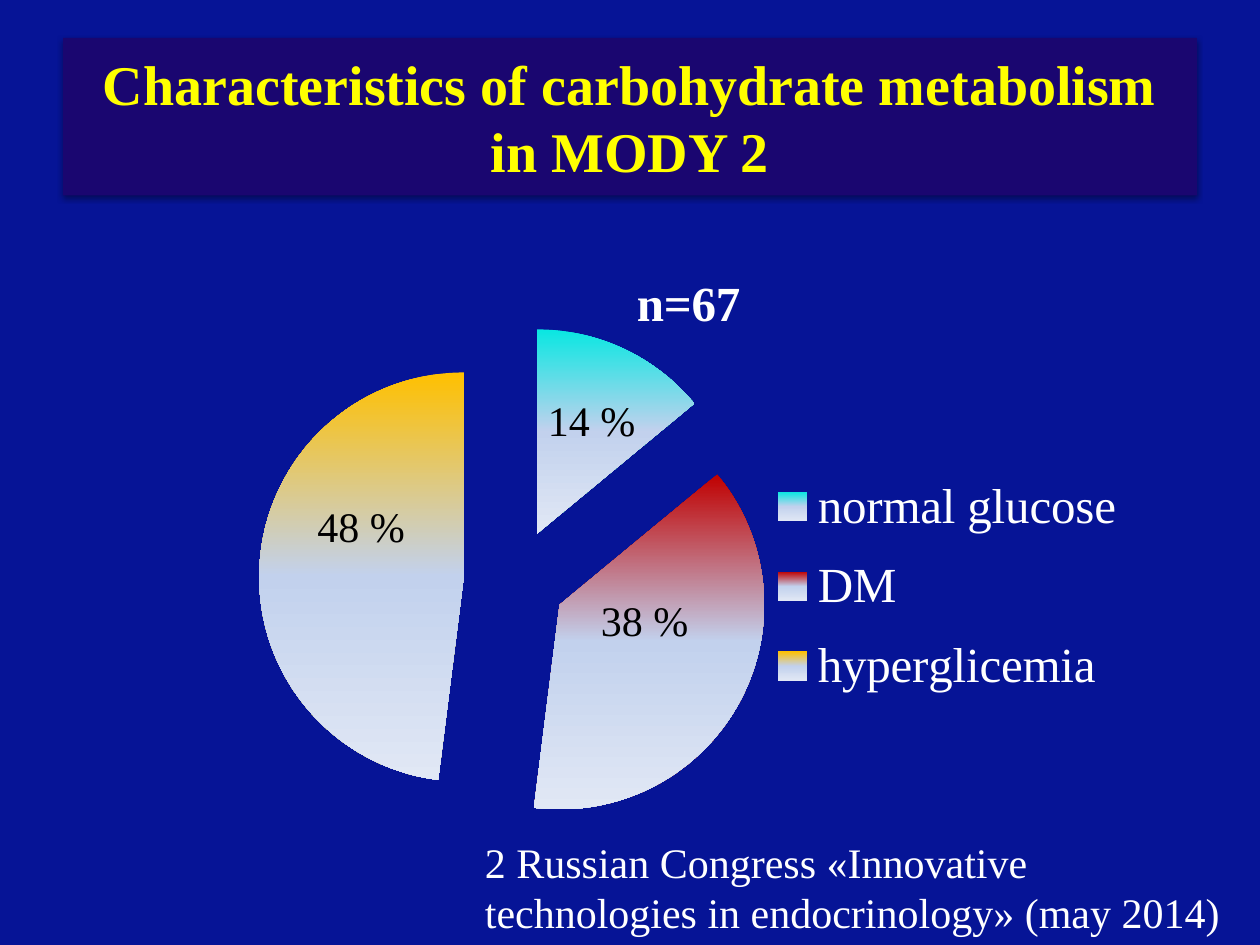
from copy import deepcopy
from dataclasses import dataclass

from lxml import etree
from pptx import Presentation
from pptx.chart.data import CategoryChartData
from pptx.dml.color import RGBColor
from pptx.enum.chart import XL_CHART_TYPE, XL_LEGEND_POSITION
from pptx.enum.text import MSO_ANCHOR, MSO_AUTO_SIZE, PP_ALIGN
from pptx.oxml.ns import qn
from pptx.util import Inches, Pt

PIE = XL_CHART_TYPE.PIE
LEGEND_RIGHT = XL_LEGEND_POSITION.RIGHT
MIDDLE = MSO_ANCHOR.MIDDLE
CENTER = PP_ALIGN.CENTER
FIT_SHAPE = MSO_AUTO_SIZE.SHAPE_TO_FIT_TEXT


@dataclass(frozen=True)
class Theme:
    font: str = "Times New Roman"
    background: str = "061496"
    title_fill: str = "1A0670"
    title_text: str = "FFFF00"
    light: str = "FFFFFF"
    dark: str = "000000"
    fade: tuple = ("C2D1ED", "E1E8F5")
    title_size: int = 32
    chart_size: int = 28
    body_size: int = 24


def rgb(value):
    return RGBColor.from_string(value)


def add_xml(parent, tag, **attrs):
    return etree.SubElement(parent, qn(tag), {k: str(v) for k, v in attrs.items()})


def place(parent, index, box, inner=False):
    """Fix a chart part at x, y, width, height, as fractions of the chart."""
    for old in parent.findall(qn("c:layout")):
        parent.remove(old)
    layout = etree.Element(qn("c:layout"))
    parent.insert(index, layout)
    manual = add_xml(layout, "c:manualLayout")
    if inner:
        add_xml(manual, "c:layoutTarget", val="inner")
    for axis in "xy":
        add_xml(manual, f"c:{axis}Mode", val="edge")
    for key, value in zip("xywh", box):
        add_xml(manual, f"c:{key}", val=value)


class SlideBuilder:
    def __init__(self, prs, theme):
        self.theme = theme
        self.s = prs.slides.add_slide(prs.slide_layouts[5])
        fill = self.s.background.fill
        fill.solid()
        fill.fore_color.rgb = rgb(theme.background)

    def style(self, font, size, color, bold=False):
        font.name = self.theme.font
        font.size = Pt(size)
        font.bold = bold
        font.color.rgb = rgb(color)

    def title(self, text, left, top, width, height):
        sp = self.s.shapes.title
        sp.left, sp.top = Inches(left), Inches(top)
        sp.width, sp.height = Inches(width), Inches(height)
        sp.fill.solid()
        sp.fill.fore_color.rgb = rgb(self.theme.title_fill)
        tf = sp.text_frame
        tf.text = text
        tf.word_wrap = True
        tf.vertical_anchor = MIDDLE
        p = tf.paragraphs[0]
        p.alignment = CENTER
        self.style(p.font, self.theme.title_size, self.theme.title_text, True)
        # Soft shadow straight below the title band
        effects = add_xml(sp._element.spPr, "a:effectLst")
        shadow = add_xml(effects, "a:outerShdw", blurRad=Pt(3.1), dist=Pt(1.6),
                         dir=90 * 60000, rotWithShape=0)
        color = add_xml(shadow, "a:srgbClr", val=self.theme.dark)
        add_xml(color, "a:alpha", val=38000)

    def text(self, lines, left, top, width, height, color, wrap=False):
        sp = self.s.shapes.add_textbox(
            Inches(left), Inches(top), Inches(width), Inches(height))
        tf = sp.text_frame
        tf.word_wrap = wrap
        tf.auto_size = FIT_SHAPE
        tf.text = "\n".join(lines)
        for p in tf.paragraphs:
            self.style(p.font, self.theme.body_size, color)

    def pie(self, name, slices, left, top, width, height, plot, legend, explosion):
        data = CategoryChartData()
        data.categories = [label for label, _, _ in slices]
        data.add_series(name, [value for _, value, _ in slices])
        chart = self.s.shapes.add_chart(
            PIE, Inches(left), Inches(top), Inches(width), Inches(height), data).chart
        size, light = self.theme.chart_size, self.theme.light
        self.style(chart.font, size, light)

        # Chart title and legend
        chart.has_title = True
        tf = chart.chart_title.text_frame
        tf.text = name
        self.style(tf.paragraphs[0].font, size, light, True)
        chart.has_legend = True
        chart.legend.position = LEGEND_RIGHT
        chart.legend.include_in_layout = False
        self.style(chart.legend.font, size, light)

        # Fixed plot area, and a legend wide enough for one line per entry
        space = chart._chartSpace
        place(space.find(".//" + qn("c:plotArea")), 0, plot, inner=True)
        place(space.find(".//" + qn("c:legend")), 1, legend)

        # Separated slices, each fading downwards
        chart.plots[0].vary_by_categories = True
        series = chart.plots[0].series[0]
        ser = series._element
        explode = etree.Element(qn("c:explosion"), val=str(explosion))
        ser.find(qn("c:cat")).addprevious(explode)
        for i, (_, _, color) in enumerate(slices):
            point = series.points[i].format
            point.line.fill.background()
            fill = point.fill
            fill.gradient()
            fill.gradient_angle = 270
            stop_list = ser.findall(".//" + qn("a:gsLst"))[-1]
            stop_list.append(deepcopy(stop_list[-1]))
            stops = zip(fill.gradient_stops, (0, 0.5, 1), (color, *self.theme.fade))
            for stop, position, stop_color in stops:
                stop.position = position
                stop.color.rgb = rgb(stop_color)


def main():
    prs = Presentation()
    prs.slide_width, prs.slide_height = Inches(10), Inches(7.5)
    theme = Theme()
    slide = SlideBuilder(prs, theme)

    slices = [("normal glucose", 14, "09E7E2"),
              ("DM", 38, "C00000"),
              ("hyperglicemia", 48, "FFC000")]
    slide.pie("n=67", slices, 1.93, 1.94, 7.07, 4.89,
              plot=(0, 0.13, 0.61, 0.83), legend=(0.58, 0.34, 0.42, 0.43),
              explosion=25)

    slide.title("Characteristics of carbohydrate metabolism in MODY 2",
                0.5, 0.3, 9, 1.25)

    # Share labels on the slices
    label_places = [(4.25, 3.08), (4.67, 4.67), (2.42, 3.92)]
    for (_, value, _), (left, top) in zip(slices, label_places):
        slide.text([f"{value} %"], left, top, 0.9, 0.5, theme.dark)

    # Source of the data
    slide.text(["2 Russian Congress «Innovative",
                "technologies in endocrinology» (may 2014)"],
               3.75, 6.59, 6.25, 0.91, theme.light, wrap=True)

    prs.save("out.pptx")


if __name__ == "__main__":
    main()
